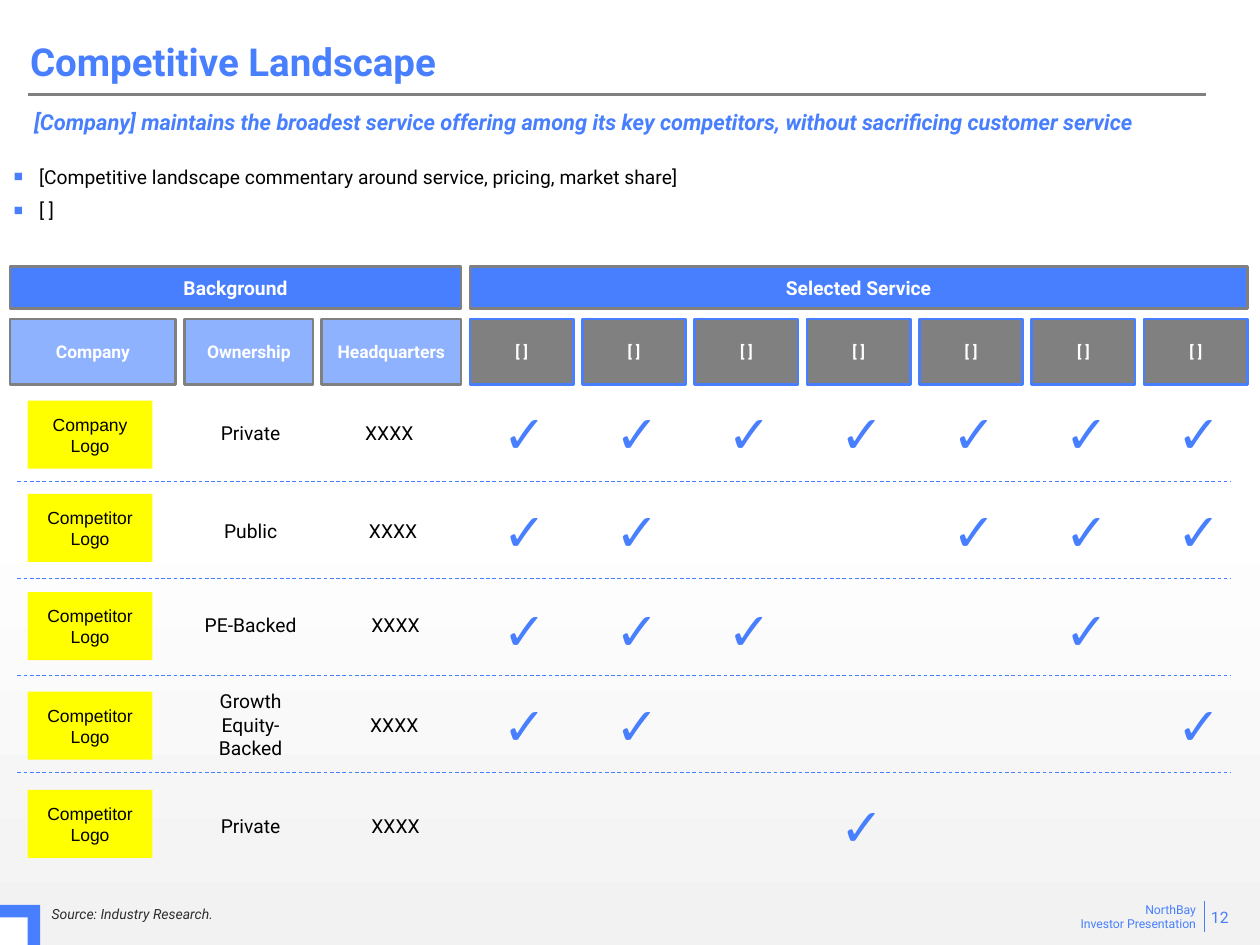
from lxml.etree import SubElement
from pptx import Presentation
from pptx.dml.color import RGBColor
from pptx.enum.dml import MSO_LINE as Dash
from pptx.enum.shapes import MSO_CONNECTOR as Link, MSO_SHAPE as Shape
from pptx.enum.text import MSO_ANCHOR as Anchor, MSO_AUTO_SIZE as Auto, PP_ALIGN as Align
from pptx.oxml.ns import qn
from pptx.util import Pt

BLUE, PALE, GREY = "487FFE", "8FB2FF", "808080"
WHITE, BLACK, YELLOW = "FFFFFF", "000000", "FFFF00"


def paint(fill, color):
    fill.solid()
    fill.fore_color.rgb = RGBColor.from_string(color)


def write(shape, text, size=11, color=BLACK, font="Roboto", bold=False, italic=False,
          align=Align.LEFT, anchor=Anchor.TOP, inset=(7.2, 3.6, 7.2, 3.6),
          before=0, after=0, space=None):
    """Fill a shape with text, one paragraph to a line."""
    frame = shape.text_frame
    frame.text = text
    frame.word_wrap = True
    frame.auto_size = Auto.NONE
    frame.vertical_anchor = anchor
    (frame.margin_left, frame.margin_top,
     frame.margin_right, frame.margin_bottom) = [Pt(n) for n in inset]
    for para in frame.paragraphs:
        para.alignment = align
        para.space_before, para.space_after = Pt(before), Pt(after)
        if space:
            para.line_spacing = space
        face = para.runs[0].font
        face.name, face.size, face.bold, face.italic = font, Pt(size), bold, italic
        paint(face.fill, color)


deck = Presentation()
deck.slide_width, deck.slide_height = Pt(720), Pt(540)
slide = deck.slides.add_slide(deck.slide_layouts[1])
shapes = slide.shapes

# Background
back = slide.background.fill
back.gradient()
back.gradient_angle = 270
for stop, place, color in zip(back.gradient_stops, (0.53, 1), (WHITE, "F2F2F2")):
    stop.position = place
    stop.color.rgb = RGBColor.from_string(color)

# Title and commentary
title, body = slide.placeholders
title.left, title.top, title.width, title.height = Pt(10), Pt(18), Pt(567), Pt(34)
write(title, "Competitive Landscape", size=22, color=BLUE, bold=True,
      anchor=Anchor.BOTTOM, space=0.9)

body.left, body.top, body.width, body.height = Pt(7.2), Pt(93.6), Pt(679), Pt(34)
write(body, "[Competitive landscape commentary around service, pricing, market share]\n[ ]",
      align=Align.JUSTIFY, inset=(0, 0.7, 0, 0), before=3, after=3)
for para in body.text_frame.paragraphs:
    props = para._p.get_or_add_pPr()
    props.set("marL", str(Pt(15.1)))
    props.set("indent", str(Pt(-14.4)))
    SubElement(SubElement(props, qn("a:buClr")), qn("a:srgbClr"), val=BLUE)
    SubElement(props, qn("a:buSzPct"), val="79000")
    SubElement(props, qn("a:buFont"), typeface="Arial")
    SubElement(props, qn("a:buChar"), char="■")

# Table rows: logo, ownership, lines of ownership, services offered,
# then logo top, check top, text top, headquarters left
rows = [
    ("Company Logo", "Private", 1, (0, 1, 2, 3, 4, 5, 6), 229, 228.2, 239.8, 180.7),
    ("Competitor Logo", "Public", 1, (0, 1, 4, 5, 6), 282.2, 284.4, 295.9, 182.9),
    ("Competitor Logo", "PE-Backed", 1, (0, 1, 2, 5), 338.4, 341.3, 349.9, 184.3),
    ("Competitor Logo", "Growth Equity-Backed", 3, (0, 1, 6), 395.3, 395.3, 406.8, 183.6),
    ("Competitor Logo", "Private", 1, (3,), 451.4, 452.9, 464.4, 184.3),
]
STEP = 64.2

# Filled boxes: place, fill, line, text, format
head = dict(size=11, color=WHITE, bold=True)
sub = dict(head, size=10)
mark = dict(head, size=9, inset=(0.7,) * 4)
boxes = [
    ((0, 517, 23, 23), BLUE, None, "", {}),
    ((0, 524.2, 15.8, 15.8), WHITE, None, "", {}),
    ((5.8, 152.4, 257.6, 23.8), BLUE, GREY, "Background", head),
    ((268.6, 152.4, 444.2, 23.8), BLUE, GREY, "Selected Service", head),
    ((5.8, 182.2, 94.6, 37.4), PALE, GREY, "Company", sub),
    ((105.5, 182.2, 73.4, 37.4), PALE, GREY, "Ownership", sub),
    ((183.6, 182.2, 79.9, 37.4), PALE, GREY, "Headquarters", sub),
]
boxes += [((268.6 + i * STEP, 182.2, 59, 37.4), GREY, BLUE, "[ ]", mark) for i in range(7)]
boxes += [((15.8, row[4], 71.3, 38.9), YELLOW, None, row[0], dict(size=10, font="Arial"))
          for row in rows]
for place, fill, edge, text, style in boxes:
    box = shapes.add_shape(Shape.RECTANGLE, *[Pt(n) for n in place])
    box.shadow.inherit = False
    paint(box.fill, fill)
    if edge:
        paint(box.line.fill, edge)
        box.line.width = Pt(1.5)
    else:
        box.line.fill.background()
    if text:
        write(box, text, align=Align.CENTER, anchor=Anchor.MIDDLE, **style)

# Rules: ends, colour, width, dash
rules = [
    ((15.8, 54, 689, 54), GREY, 1.5, None),
    ((688.3, 514.8, 688.3, 532.8), BLUE, 0.5, None),
]
rules += [((10, 275 + i * 55.44, 703.4, 275 + i * 55.44), BLUE, 0.5, Dash.DASH)
          for i in range(4)]
for ends, color, width, dash in rules:
    rule = shapes.add_connector(Link.STRAIGHT, *[Pt(n) for n in ends])
    paint(rule.line.fill, color)
    rule.line.width = Pt(width)
    if dash:
        rule.line.dash_style = dash
    SubElement(rule._element.spPr, qn("a:effectLst"))

# Free text: place, text, format
cell = dict(align=Align.CENTER, inset=(3.6, 0.7, 0, 0), before=1, after=2)
check = dict(cell, size=30, color=BLUE, font="Arial", bold=True)
notes = [
    ((17.3, 61.9, 692.6, 35.3),
     "[Company] maintains the broadest service offering among its key competitors, "
     "without sacrificing customer service",
     dict(size=12.5, color=BLUE, bold=True, italic=True, inset=(2.2, 0, 0, 0))),
    ((29.5, 517, 528.5, 10), "Source: Industry Research.",
     dict(size=8, color="2D2E2D", italic=True, anchor=Anchor.BOTTOM, inset=(0,) * 4)),
    ((607, 511.9, 83.5, 24.5), "NorthBay\nInvestor Presentation",
     dict(size=7, color=BLUE, align=Align.RIGHT)),
    ((655.2, 515.5, 54, 17.3), "12",
     dict(size=9, color=BLUE, align=Align.RIGHT, anchor=Anchor.MIDDLE)),
]
for logo, owner, count, marks, _, high, top, left in rows:
    rise = (count - 1) * 6.7
    notes.append(((113, top - rise, 56.9, 14.4 + 2 * rise), owner, cell))
    notes.append(((left, top, 79.9, 14.4), "XXXX", cell))
    notes += [((275 + i * STEP, high, 46, 37.4), "✓", check) for i in marks]
for place, text, style in notes:
    write(shapes.add_textbox(*[Pt(n) for n in place]), text, **style)

deck.save("out.pptx")
